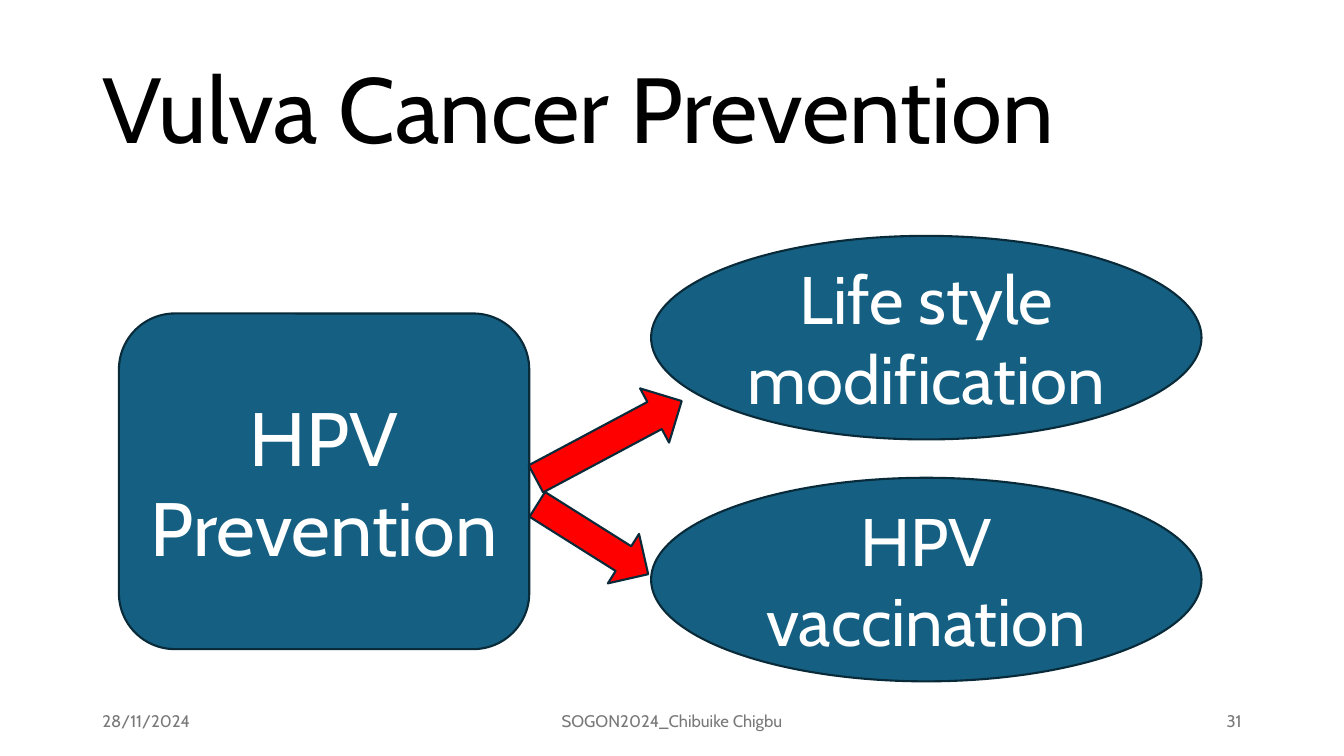
"""Build the vulva cancer prevention slide."""
from pptx import Presentation
from pptx.dml.color import RGBColor
from pptx.enum.shapes import MSO_SHAPE
from pptx.enum.text import MSO_ANCHOR, MSO_AUTO_SIZE, PP_ALIGN
from pptx.util import Inches, Pt

prs = Presentation()
prs.slide_width, prs.slide_height = Inches(13.333), Inches(7.5)
s = prs.slides.add_slide(prs.slide_layouts[5])


def box(left, top, width, height):
    """Turn percentages of the slide's size into lengths."""
    w, h = prs.slide_width / 100, prs.slide_height / 100
    return [int(v) for v in (left * w, top * h, width * w, height * h)]


def write(sp, text, size, color, align):
    """Put one formatted paragraph into a shape."""
    tf = sp.text_frame
    frame = {"word_wrap": True, "auto_size": MSO_AUTO_SIZE.NONE,
             "vertical_anchor": MSO_ANCHOR.MIDDLE}
    for name, value in frame.items():
        setattr(tf, name, value)
    p = tf.paragraphs[0]
    p.alignment = align
    r = p.add_run()
    r.text = text
    for name, value in {"name": "Cabin", "size": Pt(size)}.items():
        setattr(r.font, name, value)
    r.font.color.rgb = RGBColor.from_string(color)
    return p


title = s.shapes.title
title.left, title.top, title.width, title.height = box(6.88, 5.32, 86.25, 19.33)
write(title, "Vulva Cancer Prevention", 66, "000000", PP_ALIGN.LEFT).line_spacing = 0.9

OVAL, ROUND, ARROW = MSO_SHAPE.OVAL, MSO_SHAPE.ROUNDED_RECTANGLE, MSO_SHAPE.RIGHT_ARROW
shapes = [
    (OVAL, (48.45, 31.2, 40.95, 26.93), 0, "156082", "Life style modification", 48),
    (ROUND, (8.85, 41.47, 30.53, 44.4), 0, "156082", "HPV Prevention", 54),
    (OVAL, (48.45, 63.2, 40.95, 26.93), 0, "156082", "HPV vaccination", 48),
    (ARROW, (39.15, 54.13, 12.3, 8.13), 331.9, "FF0000", "", 0),
    (ARROW, (39.23, 67.47, 9.75, 7.73), 32.2, "FF0000", "", 0),
]
for kind, place, angle, fill, text, size in shapes:
    sp = s.shapes.add_shape(kind, *box(*place))
    sp.rotation = angle
    sp.shadow.inherit = False
    sp.fill.solid()
    sp.fill.fore_color.rgb = RGBColor.from_string(fill)
    sp.line.color.rgb = RGBColor.from_string("092A39")
    sp.line.width = Pt(1.5)
    if text:
        write(sp, text, size, "FFFFFF", PP_ALIGN.CENTER)

footers = [
    (6.88, 22.5, "28/11/2024", PP_ALIGN.LEFT),
    (33.13, 33.75, "SOGON2024_Chibuike Chigbu", PP_ALIGN.CENTER),
    (70.63, 22.5, "31", PP_ALIGN.RIGHT),
]
for left, width, text, align in footers:
    sp = s.shapes.add_textbox(*box(left, 92.67, width, 5.33))
    write(sp, text, 12, "797979", align)

prs.save("out.pptx")
